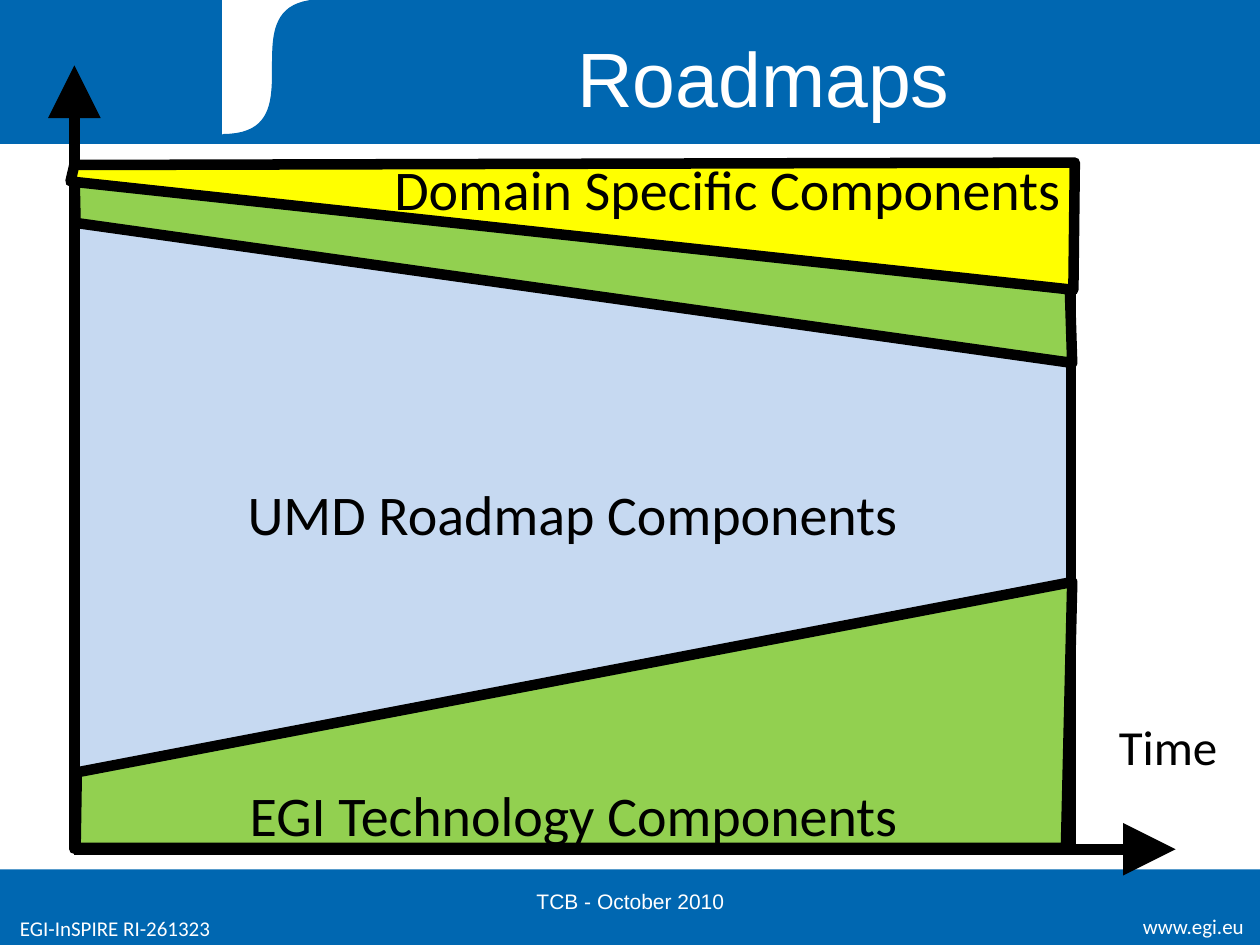
from dataclasses import dataclass

import pptx
import pptx.dml.color
import pptx.enum.shapes
import pptx.enum.text
import pptx.oxml
import pptx.oxml.ns
import pptx.util
from pptx.util import Pt

RGBColor = pptx.dml.color.RGBColor
ALIGN = pptx.enum.text.PP_ALIGN
ANCHOR = pptx.enum.text.MSO_ANCHOR
RECTANGLE = pptx.enum.shapes.MSO_SHAPE.RECTANGLE

BLUE = RGBColor(0x00, 0x67, 0xB1)
WHITE = RGBColor(0xFF, 0xFF, 0xFF)
BLACK = RGBColor(0x00, 0x00, 0x00)
PALE_BLUE = RGBColor(0xC6, 0xD9, 0xF1)
GREEN = RGBColor(0x92, 0xD0, 0x50)
YELLOW = RGBColor(0xFF, 0xFF, 0x00)

SLIDE_W, SLIDE_H = 720, 540
HEADER_H = 82
TAB_LEFT, TAB_RIGHT, TAB_BOTTOM = 127.4, 269.3, 77
CURVE_END = 184.3
CURVE_STEPS = 40
OUTLINE = 6
ORIGIN = (42.5, 485.3)
VALUE_TIP = (42.5, 37.4)
TIME_TIP = (671.8, 485.3)

Point = tuple[float, float]


@dataclass(frozen=True)
class Box:
    left: float
    top: float
    width: float
    height: float


@dataclass(frozen=True)
class Label:
    text: str
    box: Box
    size: float
    font: str = "Calibri"
    color: RGBColor = BLACK
    align: ALIGN = ALIGN.LEFT
    anchor: ANCHOR = ANCHOR.TOP
    wrap: bool = True


@dataclass(frozen=True)
class Band:
    color: RGBColor
    corners: tuple[Point, ...]


TECHNOLOGY = Band(GREEN, ((43.2, 484.6), (609.1, 484.6), (612.7, 332.6), (43.9, 441.4)))
UPPER_GREEN = Band(GREEN, ((42.5, 95), (609.1, 95), (612.7, 207.4), (43.2, 127.4)))
DOMAIN = Band(YELLOW, ((42.5, 94.3), (614.2, 92.9), (613.4, 165.6), (40.3, 103.7)))

FOOTER_LABELS = (
    Label("www.egi.eu", Box(604.1, 518.4, 113.8, 22.3), 12, color=WHITE, align=ALIGN.RIGHT),
    Label("EGI-InSPIRE RI-261323", Box(4.3, 519.8, 180, 22.3), 12, color=WHITE),
    Label("TCB - October 2010", Box(246.2, 500.4, 228.2, 28.8), 12, "Arial", WHITE,
          ALIGN.CENTER, ANCHOR.MIDDLE),
)
TITLE = Label("Roadmaps", Box(167, 9.4, 538.6, 68.4), 44, "Arial", WHITE,
              ALIGN.CENTER, ANCHOR.MIDDLE)
TIME = Label("Time", Box(632.2, 406.1, 71.3, 41), 28, wrap=False)
DOMAIN_LABEL = Label("Domain Specific Components", Box(218.2, 85, 399.6, 67.7), 32, wrap=False)


def paint(shape, fill: RGBColor, line: RGBColor, width: float) -> None:
    shape.shadow.inherit = False
    shape.fill.solid()
    shape.fill.fore_color.rgb = fill
    shape.line.color.rgb = line
    shape.line.width = Pt(width)


def write(frame, text: str, size: float, font: str, color: RGBColor,
          align: ALIGN, anchor: ANCHOR) -> None:
    frame.vertical_anchor = anchor
    paragraph = frame.paragraphs[0]
    paragraph.alignment = align
    run = paragraph.add_run()
    run.text = text
    run.font.size = Pt(size)
    run.font.name = font
    run.font.color.rgb = color


def add_label(slide, label: Label) -> None:
    box = label.box
    frame = slide.shapes.add_textbox(
        Pt(box.left), Pt(box.top), Pt(box.width), Pt(box.height)).text_frame
    frame.word_wrap = label.wrap
    write(frame, label.text, label.size, label.font, label.color, label.align, label.anchor)


def add_rectangle(slide, box: Box, fill: RGBColor, line: RGBColor, width: float):
    rectangle = slide.shapes.add_shape(
        RECTANGLE, Pt(box.left), Pt(box.top), Pt(box.width), Pt(box.height))
    paint(rectangle, fill, line, width)
    return rectangle


def add_outline(slide, points: list[Point], fill: RGBColor, line: RGBColor, width: float):
    corners = [(Pt(x), Pt(y)) for x, y in points]
    builder = slide.shapes.build_freeform(*corners[0])
    builder.add_line_segments(corners[1:], close=True)
    outline = builder.convert_to_shape()
    paint(outline, fill, line, width)
    return outline


def add_band(slide, band: Band):
    return add_outline(slide, list(band.corners), band.color, BLACK, OUTLINE)


def add_axis(slide, tip: Point) -> None:
    """Draw an axis from its arrow tip back to the origin."""
    axis = slide.shapes.add_connector(
        pptx.enum.shapes.MSO_CONNECTOR.STRAIGHT, *(Pt(v) for v in tip + ORIGIN))
    axis.line.color.rgb = BLACK
    axis.line.width = Pt(OUTLINE)
    head = pptx.oxml.parse_xml(
        f'<a:headEnd {pptx.oxml.ns.nsdecls("a")} type="triangle" w="lg" len="lg"/>')
    axis.line._get_or_add_ln().append(head)
    axis._element.spPr.append(
        pptx.oxml.parse_xml(f'<a:effectLst {pptx.oxml.ns.nsdecls("a")}/>'))


def s_curve() -> list[Point]:
    """Points of the Bezier edge rising from the tab's lower left to the top."""
    points = []
    for step in range(CURVE_STEPS + 1):
        t = step / CURVE_STEPS
        u = 1 - t
        near_left = u**3 + 3 * u * t**2
        low = u**3 + 3 * u**2 * t
        points.append((TAB_LEFT * near_left + CURVE_END * (1 - near_left), TAB_BOTTOM * low))
    return points


def add_frame(slide) -> None:
    footer = add_rectangle(slide, Box(0, 496.8, SLIDE_W, 43.2), BLUE, BLUE, 0.75)
    footer.line.fill.background()
    add_rectangle(slide, Box(0, 0, SLIDE_W, HEADER_H), BLUE, BLUE, 0.75)
    tab = Box(TAB_LEFT, 0, TAB_RIGHT - TAB_LEFT, TAB_BOTTOM)
    add_rectangle(slide, tab, WHITE, WHITE, 0.75)
    swoosh = [(TAB_RIGHT, 0), (TAB_RIGHT, TAB_BOTTOM), *s_curve()]
    add_outline(slide, swoosh, BLUE, BLUE, 0.75)


def add_roadmap(slide) -> None:
    roadmap = add_rectangle(slide, Box(42.5, 100.8, 569.5, 384.5), PALE_BLUE, BLACK, OUTLINE)
    write(roadmap.text_frame, "UMD Roadmap Components", 32, "Calibri", BLACK,
          ALIGN.CENTER, ANCHOR.MIDDLE)
    for tip in (VALUE_TIP, TIME_TIP):
        add_axis(slide, tip)
    add_label(slide, TIME)
    technology = add_band(slide, TECHNOLOGY)
    technology.text_frame.margin_bottom = 0
    write(technology.text_frame, "EGI Technology Components", 32, "Calibri", BLACK,
          ALIGN.CENTER, ANCHOR.BOTTOM)
    for band in (UPPER_GREEN, DOMAIN):
        add_band(slide, band)
    add_label(slide, DOMAIN_LABEL)


def main() -> None:
    deck = pptx.Presentation()
    deck.slide_width, deck.slide_height = Pt(SLIDE_W), Pt(SLIDE_H)
    slide = deck.slides.add_slide(deck.slide_layouts[6])
    add_frame(slide)
    for label in (*FOOTER_LABELS, TITLE):
        add_label(slide, label)
    add_roadmap(slide)
    deck.save("out.pptx")


if __name__ == "__main__":
    main()
